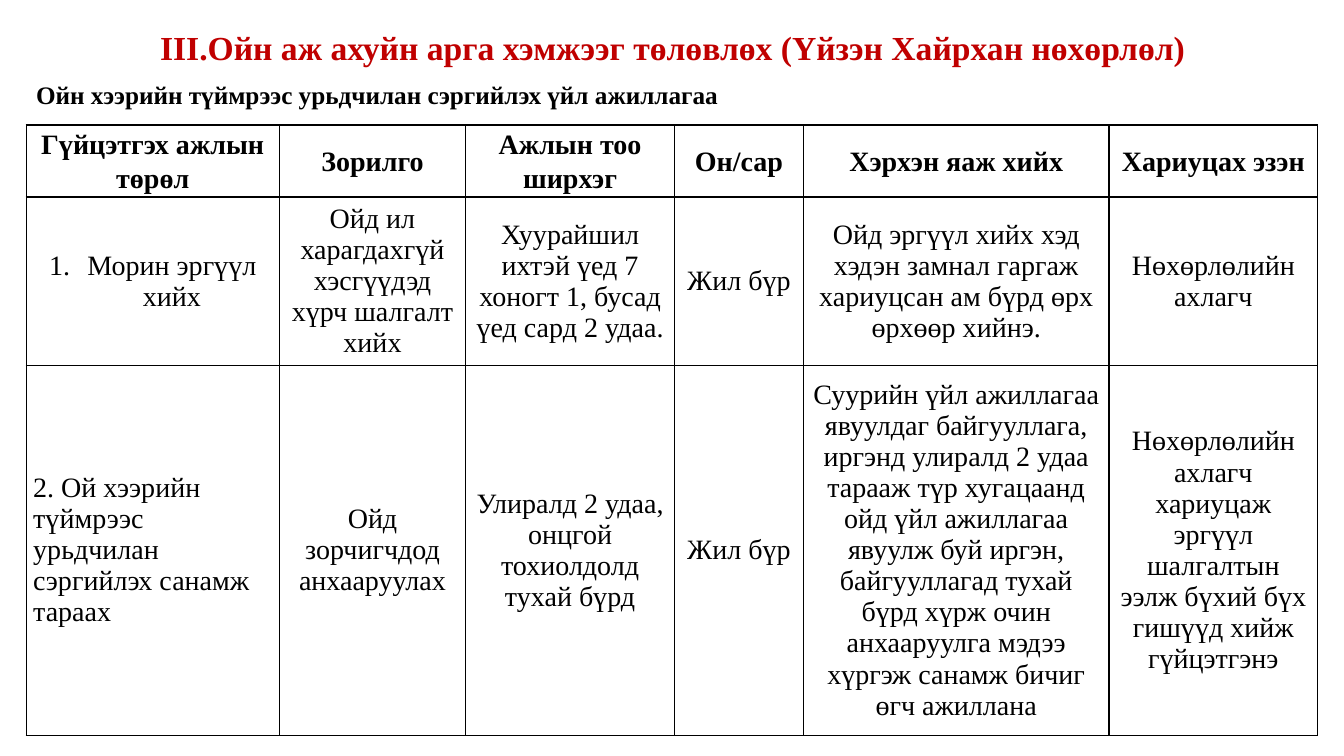
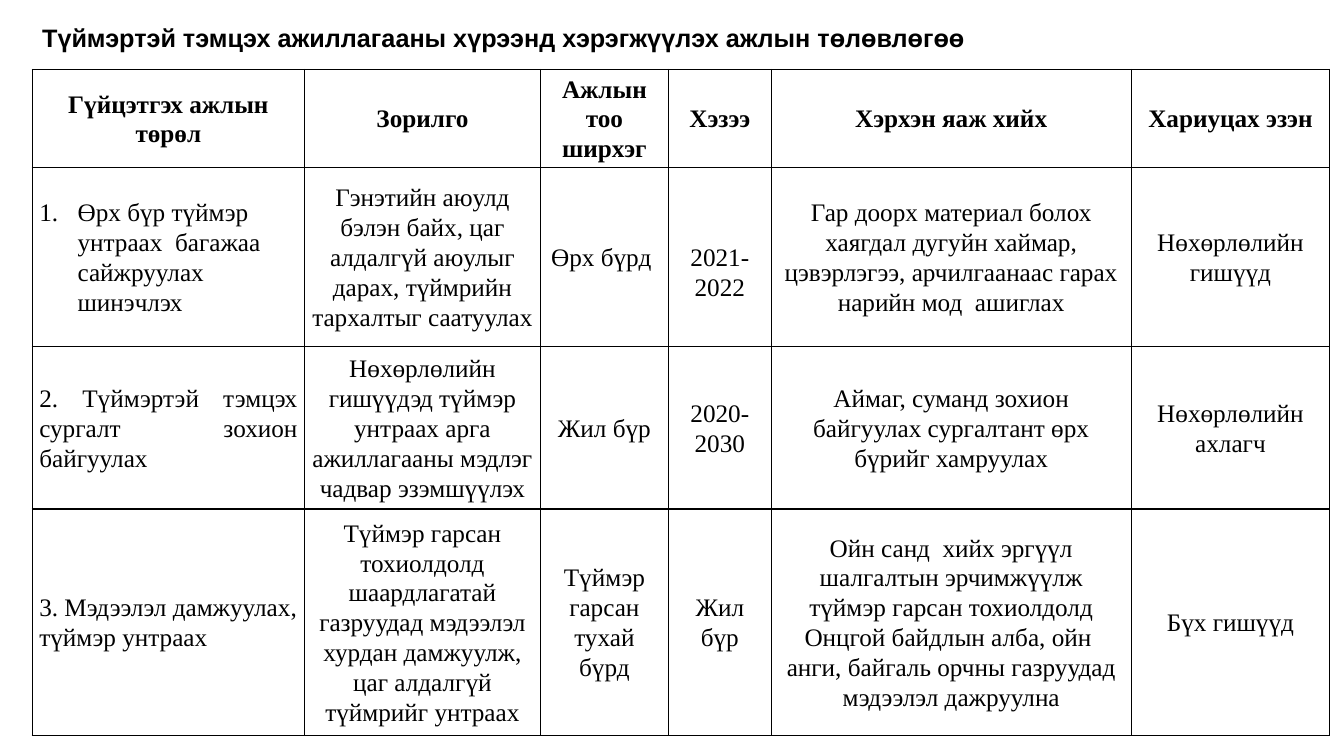
import dataclasses

import lxml.etree
import pptx
import pptx.dml.color
import pptx.enum.text
import pptx.oxml.ns
import pptx.util

Inches = pptx.util.Inches
Pt = pptx.util.Pt
Align = pptx.enum.text.PP_ALIGN
Anchor = pptx.enum.text.MSO_ANCHOR


@dataclasses.dataclass(frozen=True)
class Theme:
    """Colours, fonts and sizes shared by the slides."""

    serif: str = "Times New Roman"
    sans: str = "Arial"
    title_color: str = "C00000"
    ink: str = "000000"
    title_size: int = 24
    heading_size: int = 18
    border_width: float = 1
    cell_margin: float = 0.07
    number_indent: float = 0.38
    loose: float = 1.07


@dataclasses.dataclass(frozen=True)
class Plan:
    """Layout and wording of one work plan table."""

    columns: tuple
    heights: tuple
    rows: tuple
    first_alignments: tuple
    size: int
    body_spacing: float
    top_margins: dict = dataclasses.field(default_factory=dict)


THEME = Theme()

PREVENTION = Plan(
    columns=(2.51, 1.85, 2.07, 1.28, 3.03, 2.07),
    heights=(0.71, 1.67, 3.67),
    rows=(
        ("Гүйцэтгэх ажлын төрөл", "Зорилго", "Ажлын тоо ширхэг", "Он/сар",
         "Хэрхэн яаж хийх", "Хариуцах эзэн"),
        ("Морин эргүүл хийх",
         "Ойд ил харагдахгүй хэсгүүдэд хүрч шалгалт хийх",
         "Хуурайшил ихтэй үед 7 хоногт 1, бусад үед сард 2 удаа.",
         "Жил бүр",
         "Ойд эргүүл хийх хэд хэдэн замнал гаргаж хариуцсан ам бүрд өрх "
         "өрхөөр хийнэ.",
         "Нөхөрлөлийн ахлагч"),
        ("2. Ой хээрийн түймрээс урьдчилан сэргийлэх санамж тараах",
         "Ойд зорчигчдод анхааруулах",
         "Улиралд 2 удаа, онцгой тохиолдолд тухай бүрд",
         "Жил бүр",
         "Суурийн үйл ажиллагаа явуулдаг байгууллага, иргэнд улиралд 2 удаа "
         "тарааж түр хугацаанд ойд үйл ажиллагаа явуулж буй иргэн, "
         "байгууллагад тухай бүрд хүрж очин анхааруулга мэдээ хүргэж санамж "
         "бичиг өгч ажиллана",
         "Нөхөрлөлийн ахлагч хариуцаж эргүүл шалгалтын ээлж бүхий бүх "
         "гишүүд хийж гүйцэтгэнэ"),
    ),
    first_alignments=(Align.CENTER, Align.CENTER, Align.LEFT),
    size=20,
    body_spacing=1.0,
)

FIREFIGHTING = Plan(
    columns=(2.7, 2.34, 1.27, 1.02, 3.57, 1.97),
    heights=(0.97, 1.78, 1.61, 2.24),
    rows=(
        ("Гүйцэтгэх ажлын төрөл", "Зорилго", "Ажлын тоо ширхэг", "Хэзээ",
         "Хэрхэн яаж хийх", "Хариуцах эзэн"),
        ("Өрх бүр түймэр унтраах  багажаа сайжруулах шинэчлэх",
         "Гэнэтийн аюулд бэлэн байх, цаг алдалгүй аюулыг дарах, түймрийн "
         "тархалтыг саатуулах",
         "Өрх бүрд ",
         "2021-2022",
         "Гар доорх материал болох хаягдал дугуйн хаймар, цэвэрлэгээ, "
         "арчилгаанаас гарах нарийн мод  ашиглах",
         "Нөхөрлөлийн гишүүд"),
        ("2. Түймэртэй тэмцэх сургалт зохион байгуулах",
         "Нөхөрлөлийн гишүүдэд түймэр унтраах арга ажиллагааны мэдлэг "
         "чадвар эзэмшүүлэх",
         "Жил бүр",
         "2020-2030",
         "Аймаг, суманд зохион байгуулах сургалтант өрх бүрийг хамруулах",
         "Нөхөрлөлийн ахлагч"),
        ("3. Мэдээлэл дамжуулах, түймэр унтраах",
         "Түймэр гарсан тохиолдолд шаардлагатай газруудад мэдээлэл хурдан "
         "дамжуулж, цаг алдалгүй түймрийг унтраах",
         "Түймэр гарсан тухай бүрд",
         "Жил бүр",
         "Ойн санд  хийх эргүүл шалгалтын эрчимжүүлж түймэр гарсан "
         "тохиолдолд Онцгой байдлын алба, ойн  анги, байгаль орчны "
         "газруудад мэдээлэл дажруулна",
         "Бүх гишүүд"),
    ),
    first_alignments=(Align.CENTER, Align.LEFT, Align.JUSTIFY, Align.LEFT),
    size=18,
    body_spacing=THEME.loose,
    top_margins={(1, 3): 0.3},
)


def write(paragraph, text, size, font, color=THEME.ink, bold=False):
    """Add one styled run to a paragraph."""
    run = paragraph.add_run()
    run.text = text
    run.font.size = Pt(size)
    run.font.name = font
    run.font.bold = bold
    run.font.color.rgb = pptx.dml.color.RGBColor.from_string(color)


def add_heading(slide, box, text, font=THEME.serif):
    """Place a bold black heading in the box and return its shape."""
    shape = slide.shapes.add_textbox(*map(Inches, box))
    shape.text_frame.word_wrap = True
    write(shape.text_frame.paragraphs[0], text, THEME.heading_size, font, bold=True)
    return shape


def add_title(slide, box, text):
    """Place the centred red slide title in the box."""
    frame = slide.shapes.add_textbox(*map(Inches, box)).text_frame
    frame.word_wrap = True
    frame.vertical_anchor = Anchor.MIDDLE
    paragraph = frame.paragraphs[0]
    paragraph.alignment = Align.CENTER
    paragraph.line_spacing = 0.9
    write(paragraph, text, THEME.title_size, THEME.serif, THEME.title_color, True)


def add_child(parent, tag, **attributes):
    """Append a DrawingML element with the given attributes."""
    child = lxml.etree.SubElement(parent, pptx.oxml.ns.qn(tag))
    for name, value in attributes.items():
        child.set(name, str(value))
    return child


def number_paragraph(paragraph):
    """Give a paragraph an automatic number with a hanging indent."""
    indent = Inches(THEME.number_indent)
    properties = paragraph._p.get_or_add_pPr()
    properties.set("marL", str(indent))
    properties.set("indent", str(-indent))
    add_child(properties, "a:buFont", typeface="+mj-lt")
    add_child(properties, "a:buAutoNum", type="arabicPeriod")


def style_cell(cell, top_margin):
    """Give a cell thin borders, no fill, narrow margins and a middle anchor."""
    properties = cell._tc.get_or_add_tcPr()
    for side in ("a:lnL", "a:lnR", "a:lnT", "a:lnB"):
        line = add_child(properties, side, w=Pt(THEME.border_width))
        add_child(add_child(line, "a:solidFill"), "a:srgbClr", val=THEME.ink)
    cell.fill.background()
    cell.margin_left = cell.margin_right = Inches(THEME.cell_margin)
    cell.margin_top = Inches(top_margin)
    cell.margin_bottom = 0
    cell.vertical_anchor = Anchor.MIDDLE


def add_plan(slide, left, top, plan):
    """Place a work plan table with its top left corner at the given point."""
    table = slide.shapes.add_table(
        len(plan.rows), len(plan.columns), Inches(left), Inches(top),
        Inches(sum(plan.columns)), Inches(sum(plan.heights))).table
    table.first_row = table.horz_banding = False
    for column, width in zip(table.columns, plan.columns):
        column.width = Inches(width)
    for row_index, texts in enumerate(plan.rows):
        table.rows[row_index].height = Inches(plan.heights[row_index])
        header = row_index == 0
        for column_index, text in enumerate(texts):
            first = column_index == 0
            cell = table.cell(row_index, column_index)
            style_cell(cell, plan.top_margins.get((row_index, column_index), 0))
            paragraph = cell.text_frame.paragraphs[0]
            paragraph.alignment = (
                plan.first_alignments[row_index] if first else Align.CENTER)
            paragraph.line_spacing = THEME.loose if header else plan.body_spacing
            if first and row_index == 1:
                number_paragraph(paragraph)
            write(paragraph, text, plan.size, THEME.serif, bold=header)


def build_prevention(slide):
    """Build the fire prevention slide."""
    add_title(slide, (0.92, 0.25, 11.5, 0.49),
              "III.Ойн аж ахуйн арга хэмжээг төлөвлөх (Үйзэн Хайрхан нөхөрлөл)")
    add_heading(slide, (0.26, 0.74, 12.14, 0.4),
                "Ойн хээрийн түймрээс урьдчилан сэргийлэх үйл ажиллагаа")
    add_plan(slide, 0.26, 1.24, PREVENTION)


def build_firefighting(slide):
    """Build the firefighting slide."""
    add_heading(slide, (0.32, 0.17, 12.73, 0.4),
                "Түймэртэй тэмцэх ажиллагааны хүрээнд хэрэгжүүлэх ажлын төлөвлөгөө",
                THEME.sans)
    add_plan(slide, 0.32, 0.69, FIREFIGHTING)


def main():
    """Build and save the presentation."""
    presentation = pptx.Presentation()
    presentation.slide_width = Inches(13.33)
    presentation.slide_height = Inches(7.5)
    for build in (build_prevention, build_firefighting):
        build(presentation.slides.add_slide(presentation.slide_layouts[6]))
    presentation.save("out.pptx")


if __name__ == "__main__":
    main()
